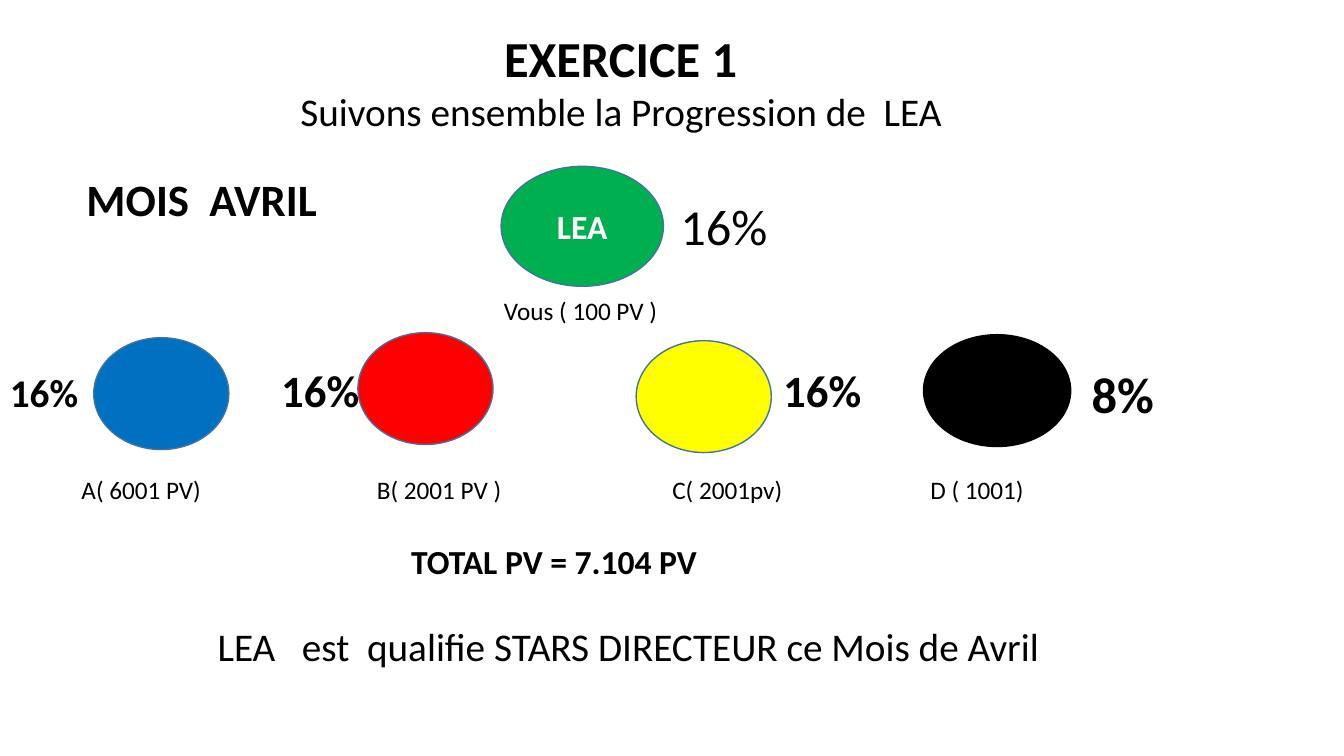
import pptx
import pptx.dml.color
import pptx.enum.shapes
import pptx.enum.text
import pptx.util

Inches = pptx.util.Inches
COLORS = {
    "black": "000000", "white": "FFFFFF", "green": "00B050", "blue": "0070C0",
    "red": "FF0000", "yellow": "FFFF00", "edge": "43739E",
}


def rgb(name):
    return pptx.dml.color.RGBColor.from_string(COLORS[name])


class Board:
    """Holds the text style and the slide being filled."""

    font = "Calibri"

    def __init__(self, slide):
        self.slide = slide

    def letter(self, shape, text, size, bold=False, color="black", center=False):
        """Put one styled line of text in a shape."""
        frame = shape.text_frame
        frame.text = text
        frame.word_wrap = True
        frame.auto_size = pptx.enum.text.MSO_AUTO_SIZE.NONE
        anchor = pptx.enum.text.MSO_ANCHOR
        frame.vertical_anchor = anchor.MIDDLE if center else anchor.TOP
        align = pptx.enum.text.PP_ALIGN
        line = frame.paragraphs[0]
        line.alignment = align.CENTER if center else align.LEFT
        line.line_spacing = 1.0
        font = line.runs[0].font
        font.name = self.font
        font.size = pptx.util.Pt(size)
        font.bold = bold
        font.color.rgb = rgb(color)

    def title(self, text, left, top, width, height, size):
        shape = self.slide.shapes.title
        shape.left, shape.top = Inches(left), Inches(top)
        shape.width, shape.height = Inches(width), Inches(height)
        self.letter(shape, text, size, bold=True)

    def label(self, text, left, top, width, height, size, bold=False):
        box = self.slide.shapes.add_textbox(
            Inches(left), Inches(top), Inches(width), Inches(height))
        self.letter(box, text, size, bold)

    def oval(self, left, top, width, height, fill, edge="edge"):
        shape = self.slide.shapes.add_shape(
            pptx.enum.shapes.MSO_SHAPE.OVAL,
            Inches(left), Inches(top), Inches(width), Inches(height))
        shape.shadow.inherit = False
        shape.fill.solid()
        shape.fill.fore_color.rgb = rgb(fill)
        shape.line.color.rgb = rgb(edge)
        shape.line.width = pptx.util.Pt(1)
        return shape


def main():
    deck = pptx.Presentation()
    deck.slide_width, deck.slide_height = Inches(13.33), Inches(7.5)
    board = Board(deck.slides.add_slide(deck.slide_layouts[5]))

    board.title("EXERCICE 1", 4.9, 0.22, 4.86, 0.71, 36)
    board.label("Suivons ensemble la Progression de  LEA", 2.88, 0.82, 9.38, 0.57, 28)
    board.label("MOIS  AVRIL", 0.76, 1.65, 2.94, 0.64, 32, True)

    leader = board.oval(4.97, 1.65, 1.61, 1.19, "green")
    board.letter(leader, "LEA", 24, True, "white", center=True)
    board.label("16%", 6.65, 1.89, 1.76, 0.71, 36)
    board.label("Vous ( 100 PV )", 4.9, 2.88, 3.57, 0.4, 18)

    # Oval left, top, width, fill, edge; rate, left, top, size; name, left
    team = [
        (0.93, 3.35, 1.34, "blue", "edge", "16%", 0, 3.6, 28, "A( 6001 PV)", 0.71),
        (3.55, 3.3, 1.34, "red", "edge", "16%", 2.69, 3.55, 32, "B( 2001 PV )", 3.64),
        (6.31, 3.38, 1.34, "yellow", "edge", "16%", 7.67, 3.55, 32, "C( 2001pv)", 6.57),
        (9.16, 3.32, 1.46, "black", "black", "8%", 10.73, 3.55, 36, "D ( 1001)", 9.13),
    ]
    for left, top, width, fill, edge, rate, x, y, size, name, start in team:
        board.oval(left, top, width, 1.11, fill, edge)
        board.label(rate, x, y, 1.26, 0.64, size, True)
        board.label(name, start, 4.66, 2, 0.4, 18)

    board.label("TOTAL PV = 7.104 PV", 3.98, 5.32, 4.66, 0.5, 24, True)
    board.label("LEA   est  qualifie STARS DIRECTEUR ce Mois de Avril",
                2.06, 6.12, 11, 0.57, 28)
    deck.save("out.pptx")


if __name__ == "__main__":
    main()
